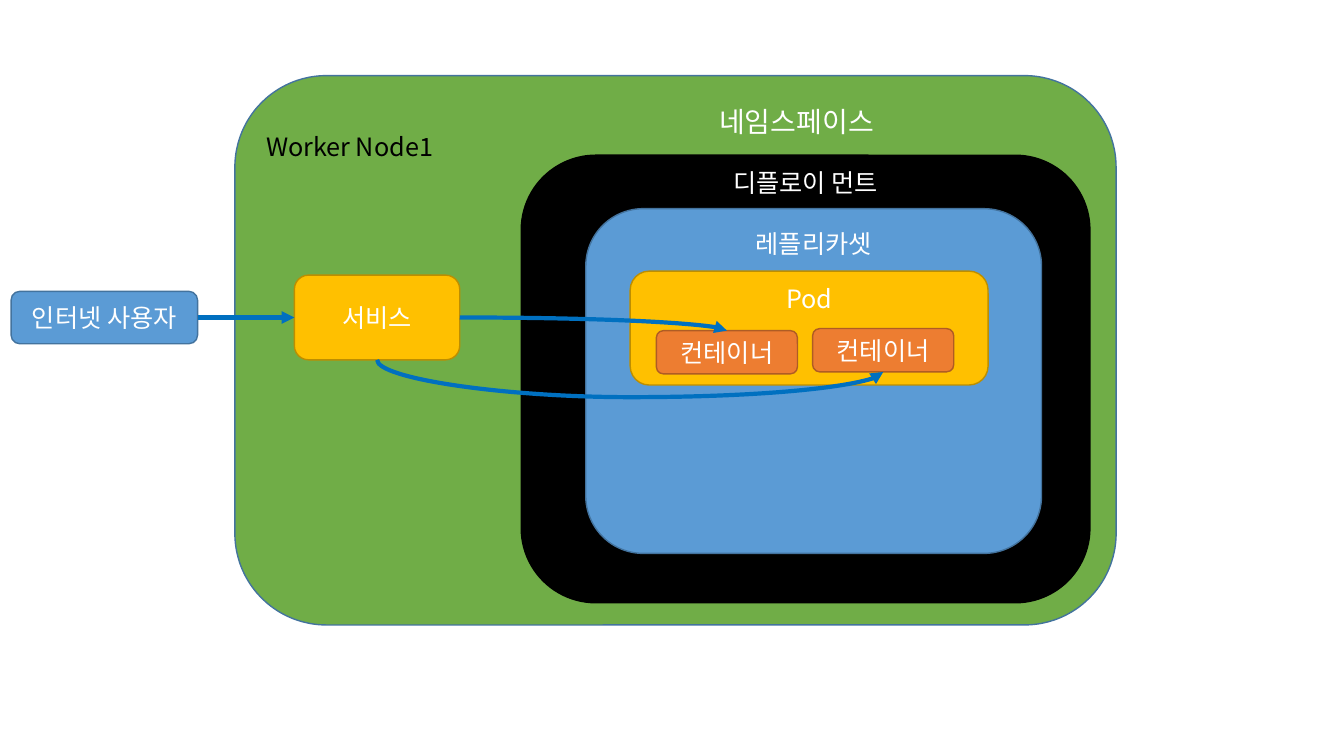
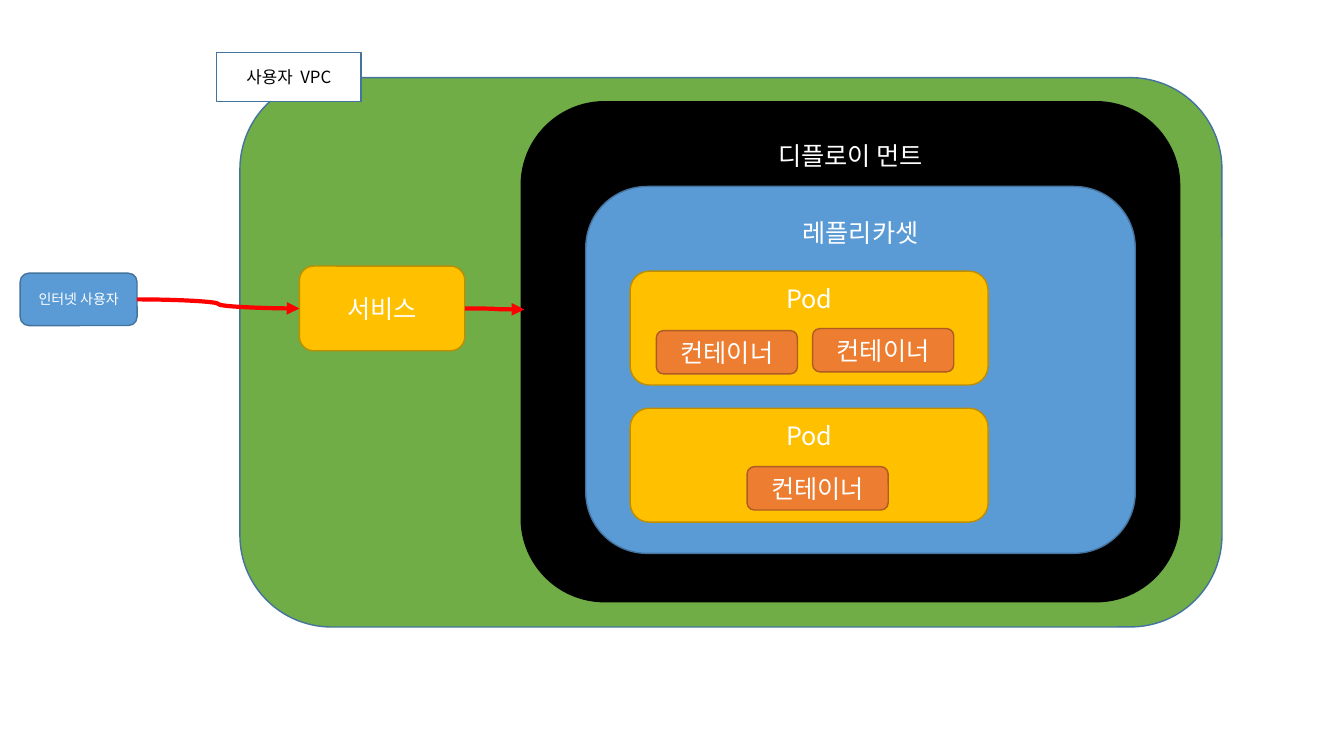
from lxml.etree import SubElement
from pptx import Presentation
from pptx.dml.color import RGBColor
from pptx.enum.shapes import MSO_CONNECTOR as Connector, MSO_SHAPE as Shape
from pptx.enum.text import MSO_ANCHOR as Anchor, PP_ALIGN as Align
from pptx.oxml.ns import qn
from pptx.util import Inches, Pt

FONT = "Noto Sans CJK KR"
COLORS = {
    "white": "FFFFFF", "black": "000000",
    "blue": "5B9BD5", "blue_edge": "43739E",
    "green": "70AD47",
    "gold": "FFC000", "gold_edge": "BD8E00",
    "orange": "ED7D31", "orange_edge": "AF5C24",
    "flow": "0070C0", "request": "FF0000",
}
TOP, LEFT, BOTTOM, RIGHT = range(4)
CAPTION_HEIGHT = 0.4
SERVICE_SIZE = (1.64, 0.84)
POD_SIZE = (3.55, 1.13)
CONTAINER_SIZE = (1.4, 0.43)


def color(name):
    return RGBColor.from_string(COLORS[name])


class Diagram:
    """Holds the presentation, its style and the current slide."""

    def __init__(self):
        self.presentation = Presentation()
        self.presentation.slide_width = Inches(13.33)
        self.presentation.slide_height = Inches(7.5)
        self.slide = None

    def new_slide(self):
        self.slide = self.presentation.slides.add_slide(self.presentation.slide_layouts[6])

    def set_text(self, shape, text, size, ink, align):
        paragraph = shape.text_frame.paragraphs[0]
        paragraph.text = text
        paragraph.alignment = align
        font = paragraph.font
        font.size = Pt(size)
        font.color.rgb = color(ink)
        font.name = FONT
        properties = paragraph._p.pPr.find(qn("a:defRPr"))
        SubElement(properties, qn("a:ea"), typeface=FONT)

    def box(self, at, fill, edge=None, text="", size=18, ink="white",
            kind=Shape.ROUNDED_RECTANGLE):
        shape = self.slide.shapes.add_shape(kind, *map(Inches, at))
        shape.shadow.inherit = False
        shape.fill.solid()
        shape.fill.fore_color.rgb = color(fill)
        if edge:
            shape.line.color.rgb = color(edge)
            shape.line.width = Pt(1)
        else:
            shape.line.fill.background()
        if text:
            shape.text_frame.vertical_anchor = Anchor.MIDDLE
            self.set_text(shape, text, size, ink, Align.CENTER)
        return shape

    def label(self, at, text, ink="white", align=Align.CENTER):
        shape = self.slide.shapes.add_textbox(*map(Inches, at))
        shape.text_frame.word_wrap = True
        shape.text_frame.vertical_anchor = Anchor.MIDDLE
        self.set_text(shape, text, 18, ink, align)

    def frame(self, at, fill, edge, caption, drop):
        """Draw a box with its caption centred `drop` inches below its top."""
        left, top, width, _ = at
        self.box(at, fill, edge)
        self.label((left, top + drop - CAPTION_HEIGHT / 2, width, CAPTION_HEIGHT), caption)

    def user(self, at, size):
        return self.box(at, "blue", "blue_edge", "인터넷 사용자", size)

    def service(self, left, top):
        return self.box((left, top, *SERVICE_SIZE), "gold", "gold_edge", "서비스")

    def deployment(self, at, drop):
        self.frame(at, "black", "black", "디플로이 먼트", drop)

    def replica_set(self, at, drop):
        self.frame(at, "blue", "blue_edge", "레플리카셋", drop)

    def pod(self, left, top, container_offsets):
        self.frame((left, top, *POD_SIZE), "gold", "gold_edge", "Pod", 0.27)
        return [
            self.box((left + across, top + down, *CONTAINER_SIZE),
                     "orange", "orange_edge", "컨테이너")
            for across, down in container_offsets
        ]

    def arrow(self, ink, start, start_side, end, end_side=None):
        """Join two shapes; `end` may also be a free point in inches."""
        connector = self.slide.shapes.add_connector(Connector.CURVE, 0, 0, 0, 0)
        connector.begin_connect(start, start_side)
        if end_side is None:
            connector.end_x, connector.end_y = map(Inches, end)
        else:
            connector.end_connect(end, end_side)
        connector.line.color.rgb = color(ink)
        connector.line.width = Pt(3)
        properties = connector._element.spPr
        SubElement(properties.find(qn("a:ln")), qn("a:tailEnd"), type="triangle")
        SubElement(properties, qn("a:effectLst"))
        return connector

    def quarter_turn(self, connector):
        """Leave sideways and arrive from above."""
        connector._element.spPr.find(qn("a:prstGeom")).set("prst", "curvedConnector2")

    def hang_below(self, connector, depth):
        """Leave and arrive from below, sagging `depth` inches under the start."""
        middle_x = (connector.begin_x + connector.end_x) // 2
        middle_y = (connector.begin_y + connector.end_y) // 2
        span = connector.end_x - connector.begin_x
        drop = connector.end_y - connector.begin_y
        connector.left, connector.top = middle_x - drop // 2, middle_y - span // 2
        connector.width, connector.height = drop, span
        connector.rotation = 270
        properties = connector._element.spPr
        properties.find(qn("a:xfrm")).set("flipH", "1")
        geometry = properties.find(qn("a:prstGeom"))
        adjustments = geometry.find(qn("a:avLst"))
        if adjustments is None:
            adjustments = SubElement(geometry, qn("a:avLst"))
        bend = round(Inches(depth) / drop * 100000)
        SubElement(adjustments, qn("a:gd"), name="adj1", fmla=f"val {bend}")


def worker_node_slide(diagram):
    diagram.new_slide()
    user = diagram.user((0.11, 2.89, 1.85, 0.52), 18)
    diagram.box((2.33, 0.75, 8.74, 5.45), "green", "blue_edge")
    service = diagram.service(2.92, 2.73)
    diagram.deployment((5.17, 1.54, 5.64, 4.44), 0.27)
    diagram.replica_set((5.81, 2.07, 4.52, 3.42), 0.35)
    first, second = diagram.pod(6.25, 2.69, [(0.26, 0.59), (1.81, 0.57)])
    diagram.box((6.95, 0.96, 1.9, 0.49), "green", text="네임스페이스", size=20,
                kind=Shape.RECTANGLE)
    diagram.arrow("flow", user, RIGHT, service, LEFT)
    diagram.quarter_turn(diagram.arrow("flow", service, RIGHT, first, TOP))
    diagram.hang_below(diagram.arrow("flow", service, BOTTOM, second, BOTTOM), 0.37)
    diagram.label((2.54, 1.25, 2.02, 0.4), "Worker Node1", "black", Align.LEFT)


def user_vpc_slide(diagram):
    diagram.new_slide()
    user = diagram.user((0.2, 2.71, 1.16, 0.52), 10)
    diagram.box((2.38, 0.77, 9.74, 5.45), "green", "blue_edge")
    diagram.box((2.15, 0.52, 1.43, 0.49), "white", "blue_edge", "사용자  VPC", 12, "black",
                Shape.RECTANGLE)
    service = diagram.service(2.97, 2.64)
    diagram.deployment((5.17, 1.01, 6.53, 4.96), 0.53)
    diagram.replica_set((5.81, 1.85, 5.45, 3.64), 0.46)
    diagram.pod(6.25, 2.69, [(0.26, 0.59), (1.81, 0.57)])
    diagram.pod(6.25, 4.05, [(1.16, 0.58)])
    diagram.arrow("request", user, RIGHT, service, LEFT)
    diagram.arrow("request", service, RIGHT, (5.2, 3.07))


def main():
    diagram = Diagram()
    worker_node_slide(diagram)
    user_vpc_slide(diagram)
    diagram.presentation.save("out.pptx")


if __name__ == "__main__":
    main()
